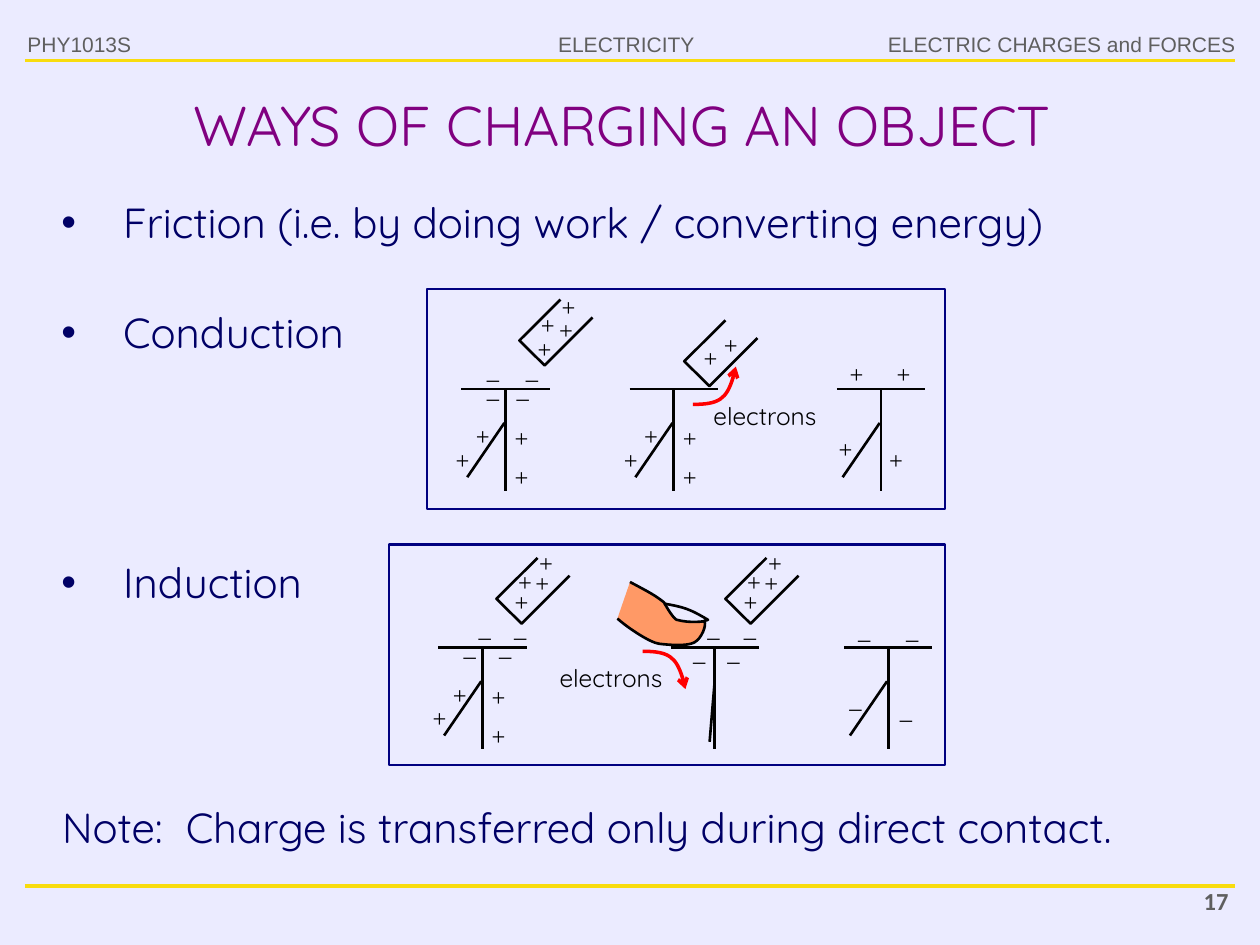
"""Build a physics slide about ways of charging an object."""
from lxml import etree
from pptx import Presentation
from pptx.dml.color import RGBColor
from pptx.enum.shapes import MSO_CONNECTOR, MSO_SHAPE
from pptx.enum.text import MSO_ANCHOR, MSO_AUTO_SIZE, PP_ALIGN
from pptx.oxml.ns import qn
from pptx.util import Pt

STRAIGHT, RECTANGLE = MSO_CONNECTOR.STRAIGHT, MSO_SHAPE.RECTANGLE
LEFT, CENTER, RIGHT = PP_ALIGN.LEFT, PP_ALIGN.CENTER, PP_ALIGN.RIGHT
TOP, MIDDLE = MSO_ANCHOR.TOP, MSO_ANCHOR.MIDDLE
NO_FIT = MSO_AUTO_SIZE.NONE

LAVENDER = RGBColor(0xEB, 0xEB, 0xFF)
YELLOW = RGBColor(0xF8, 0xDC, 0x0E)
GREY = RGBColor(0x5F, 0x5F, 0x5F)
NAVY = RGBColor(0x00, 0x00, 0x66)
FRAME_BLUE = RGBColor(0x00, 0x00, 0x80)
PURPLE = RGBColor(0x80, 0x00, 0x80)
BLACK = RGBColor(0x00, 0x00, 0x00)
RED = RGBColor(0xFF, 0x00, 0x00)
SKIN = RGBColor(0xFF, 0x99, 0x66)

HEADER = ({"name": "Arial", "size": Pt(12)}, GREY)
PAGE_NUMBER = ({"name": "Calibri", "size": Pt(14), "bold": True}, GREY)
TITLE = ({"name": "Quicksand", "size": Pt(32)}, PURPLE)
BODY = ({"name": "Quicksand", "size": Pt(24)}, NAVY)
LABEL = ({"name": "Quicksand", "size": Pt(14)}, BLACK)
CHARGE = ({"name": "Times New Roman", "size": Pt(14)}, BLACK)

DEFAULT_INSETS = (7.2, 3.6)
NO_INSETS = (0, 0)
LINE_SPACING = 1.1

CONDUCTION_Y, INDUCTION_Y = 222.3, 369.9
OPEN_LEAF = ((-0.7, 19.4), (-21.9, 50.4))
CLOSED_LEAF = ((0, 19.4), (-2.9, 54))
ROD = [(23.5, 0), (0, 23.4), (14.4, 37.6), (41.8, 10.2)]
STEM_PLUSES = [(-13, 16.9), (-24.5, 30.2), (9.2, 18), (9.2, 40.3)]
ROD_PLUSES = [(26.6, 7.2), (14.4, 18), (28.1, -5.8), (16.2, 4.5)]
INDUCTION_ROD_PLUSES = [(26.2, 4.3), (14.4, 15.1), (28.4, -7.2), (16.4, 3.6)]
TOUCHING_ROD_PLUSES = [(15.1, 11.5), (26.6, 3.6)]

FINGER = [
    (360, 332.6), (370.8, 338.4), (373.7, 339.8), (379.4, 344.2),
    (384.5, 353.5), (386.6, 354.2), (386.6, 354.2),
    (394.6, 356.4), (402.5, 355), (402.5, 355),
    (403.9, 357.1), (401, 365), (396.7, 367.2),
    (392.4, 369.4), (382.3, 368.6), (376.6, 367.9),
    (371.5, 367.2), (359.3, 359.3), (352.8, 353.5),
]
NAIL = [
    (379.4, 344.9), (391, 347), (393.8, 347.8), (404.6, 354.2),
    (399.6, 355.7), (402.5, 355), (402.5, 355),
]
UPWARD_FLOW = [(396, 231.1), (411.1, 231.1), (416.9, 226.8), (420.5, 209.5)]
DOWNWARD_FLOW = [(367.2, 372.2), (382.3, 372.2), (388.1, 376.6), (391.7, 393.8)]


def points(*values):
    """Convert numbers to lengths in points."""
    return [Pt(value) for value in values]


def set_format(target, values):
    """Set each attribute of the target from a dict."""
    for name, value in values.items():
        setattr(target, name, value)


def set_font(paragraph, style):
    """Apply font values and a colour to a paragraph."""
    values, color = style
    set_format(paragraph.font, values)
    paragraph.font.color.rgb = color


def set_frame(shape, anchor=TOP, insets=DEFAULT_INSETS):
    """Set wrapping, anchor and insets of a text frame."""
    horizontal, vertical = points(*insets)
    set_format(shape.text_frame, {
        "word_wrap": True, "auto_size": NO_FIT, "vertical_anchor": anchor,
        "margin_left": horizontal, "margin_right": horizontal,
        "margin_top": vertical, "margin_bottom": vertical,
    })


def add_text(shapes, text, box, style, alignment=LEFT, insets=DEFAULT_INSETS, spacing=1.0):
    """Add a one-paragraph text box."""
    shape = shapes.add_textbox(*points(*box))
    set_frame(shape, insets=insets)
    paragraph = shape.text_frame.paragraphs[0]
    paragraph.text = text
    set_format(paragraph, {"alignment": alignment, "line_spacing": spacing})
    set_font(paragraph, style)
    return paragraph


def add_line(shapes, start, end, color=BLACK, width=1.5):
    """Add a straight connector without a shadow."""
    connector = shapes.add_connector(STRAIGHT, *points(*start, *end))
    connector.line.color.rgb = color
    connector.line.width = Pt(width)
    etree.SubElement(connector.element.spPr, qn("a:effectLst"))


def set_outline(shape, color, width, fill=None):
    """Set the outline and the optional fill of a shape."""
    shape.shadow.inherit = False
    shape.line.color.rgb = color
    shape.line.width = Pt(width)
    if fill is None:
        shape.fill.background()
    else:
        shape.fill.solid()
        shape.fill.fore_color.rgb = fill


def add_outline(shapes, vertices, color=BLACK, width=1.5, fill=None):
    """Add an open freeform through the vertices."""
    start, *rest = [points(*vertex) for vertex in vertices]
    builder = shapes.build_freeform(*start)
    builder.add_line_segments(rest, close=False)
    shape = builder.convert_to_shape()
    set_outline(shape, color, width, fill)
    return shape


def add_curve(shapes, vertices, **outline):
    """Add a freeform whose vertices are the controls of cubic curves."""
    shape = add_outline(shapes, vertices, **outline)
    path = next(shape.element.iter(qn("a:path")))
    for index, segment in enumerate(path.findall(qn("a:lnTo"))):
        if index % 3 == 0:
            curve = etree.SubElement(path, qn("a:cubicBezTo"))
        curve.append(segment[0])
        path.remove(segment)
    return shape


def add_electron_flow(shapes, vertices, label_box, alignment):
    """Add a curved red arrow and its label."""
    arrow = add_curve(shapes, vertices, color=RED, width=2)
    etree.SubElement(arrow.element.spPr.find(qn("a:ln")), qn("a:tailEnd"), type="arrow")
    add_text(shapes, "electrons", label_box, LABEL, alignment, NO_INSETS, LINE_SPACING)


def add_charges(shapes, sign, origin, offsets):
    """Add charge signs at offsets from an origin."""
    for x, y in offsets:
        box = (origin[0] + x - 7.2, origin[1] + y, 14.4, 16.6)
        add_text(shapes, sign, box, CHARGE, CENTER, NO_INSETS, LINE_SPACING)


def add_electroscope(slide, x, y, pluses=(), minuses=(), leaf=OPEN_LEAF):
    """Add a grouped electroscope and return the shapes of its group."""
    shapes = slide.shapes.add_group_shape().shapes
    add_line(shapes, (x - 25.2, y), (x + 25.2, y))
    add_line(shapes, (x, y), (x, y + 58.3))
    add_line(shapes, *[(x + dx, y + dy) for dx, dy in leaf])
    add_charges(shapes, "+", (x, y), pluses)
    add_charges(shapes, "–", (x, y), minuses)
    return shapes


def add_rod(shapes, x, y, pluses):
    """Add a positively charged rod."""
    add_outline(shapes, [(x + dx, y + dy) for dx, dy in ROD])
    add_charges(shapes, "+", (x, y), pluses)


def add_panel(slide, *box):
    """Add the frame around a diagram."""
    set_outline(slide.shapes.add_shape(RECTANGLE, *points(*box)), FRAME_BLUE, 1.25)


def add_conduction(slide):
    """Draw the three steps of charging by conduction."""
    add_panel(slide, 243.9, 165, 295.9, 126)
    shapes = add_electroscope(slide, 288.9, CONDUCTION_Y, STEM_PLUSES,
                              [(-7.2, -16.6), (15.1, -16.6), (9.9, -5.8), (-7.2, -5.8)])
    add_rod(shapes, 296.8, 171.2, ROD_PLUSES)
    shapes = add_electroscope(slide, 385, CONDUCTION_Y, STEM_PLUSES)
    add_rod(shapes, 391, 183.1, TOUCHING_ROD_PLUSES)
    add_electron_flow(shapes, UPWARD_FLOW, (407.7, 227.5, 71.3, 20.9), LEFT)
    add_electroscope(slide, 503.4, CONDUCTION_Y,
                     [(-20.2, 23.8), (8.6, 30.2), (-14, -19), (13, -19)])


def add_induction(slide):
    """Draw the three steps of charging by induction."""
    add_panel(slide, 222.4, 311.1, 317.5, 126)
    shapes = add_electroscope(slide, 275.7, INDUCTION_Y, STEM_PLUSES,
                              [(1.4, -16.6), (21.6, -16.6), (13, -5.8), (-7.2, -5.8)])
    add_rod(shapes, 283.7, 318.8, INDUCTION_ROD_PLUSES)
    shapes = add_electroscope(slide, 408.4, INDUCTION_Y, leaf=CLOSED_LEAF, minuses=[
        (-0.7, -16.6), (20.2, -16.6), (10.8, -2.9), (-8.8, -2.9)])
    add_rod(shapes, 414.5, 318.8, INDUCTION_ROD_PLUSES)
    add_curve(shapes, FINGER, fill=SKIN)
    add_curve(shapes, NAIL)
    add_electron_flow(shapes, DOWNWARD_FLOW, (313.2, 377.3, 72, 20.2), CENTER)
    add_electroscope(slide, 507.6, INDUCTION_Y, minuses=[
        (-18.7, 23.8), (10.1, 30.2), (-13.7, -15.8), (13.7, -15.8)])


def place(shape, *box):
    """Move and size a shape."""
    set_format(shape, dict(zip(("left", "top", "width", "height"), points(*box))))


def set_indent(paragraph, margin, indent):
    """Set the left margin and first-line indent of a paragraph."""
    properties = paragraph._p.get_or_add_pPr()
    properties.set("marL", str(Pt(margin)))
    properties.set("indent", str(Pt(indent)))


def fill_title(shape):
    """Fill and format the title placeholder."""
    place(shape, 36, 45, 648, 51.8)
    set_frame(shape, MIDDLE)
    paragraph = shape.text_frame.paragraphs[0]
    paragraph.text = "WAYS OF CHARGING AN OBJECT "
    paragraph.alignment = CENTER
    set_font(paragraph, TITLE)


def fill_body(shape):
    """Fill and format the bulleted list."""
    place(shape, 14.2, 105.8, 691.2, 247.7)
    set_frame(shape)
    items = {"Friction (i.e. by doing work / converting energy)": 0, "Conduction": 31.4, "Induction": 111.2}
    shape.text_frame.text = "\n".join(items)
    for paragraph, gap in zip(shape.text_frame.paragraphs, items.values()):
        set_indent(paragraph, 49, -35.3)
        set_format(paragraph, {"line_spacing": LINE_SPACING, "space_before": Pt(gap)})
        set_font(paragraph, BODY)


def add_page_frame(slide):
    """Add the header, the page number and the rules."""
    for y, width in ((34.6, 1.75), (506.2, 2.25)):
        add_line(slide.shapes, (14.2, y), (705.6, y), YELLOW, width)
    add_text(slide.shapes, "PHY1013S", (8.6, 14.4, 85, 23), HEADER)
    add_text(slide.shapes, "ELECTRICITY", (311.8, 14.4, 92.2, 21.6), HEADER, CENTER)
    add_text(slide.shapes, "ELECTRIC CHARGES and FORCES", (461.9, 14.4, 251.3, 21.6), HEADER, RIGHT)
    add_text(slide.shapes, "17", (635, 502.6, 74.2, 26.6), PAGE_NUMBER, RIGHT)


def main():
    """Build and save the slide."""
    presentation = Presentation()
    set_format(presentation, {"slide_width": Pt(720), "slide_height": Pt(540)})
    slide = presentation.slides.add_slide(presentation.slide_layouts[1])
    slide.background.fill.solid()
    slide.background.fill.fore_color.rgb = LAVENDER
    add_page_frame(slide)
    fill_title(slide.shapes.title)
    fill_body(slide.placeholders[1])
    note = add_text(slide.shapes, "Note:  Charge is transferred only during direct contact.",
                    (14.2, 451.4, 691.2, 38.9), BODY, spacing=LINE_SPACING)
    set_indent(note, 14.2, 0)
    add_conduction(slide)
    add_induction(slide)
    presentation.save("out.pptx")


if __name__ == "__main__":
    main()
